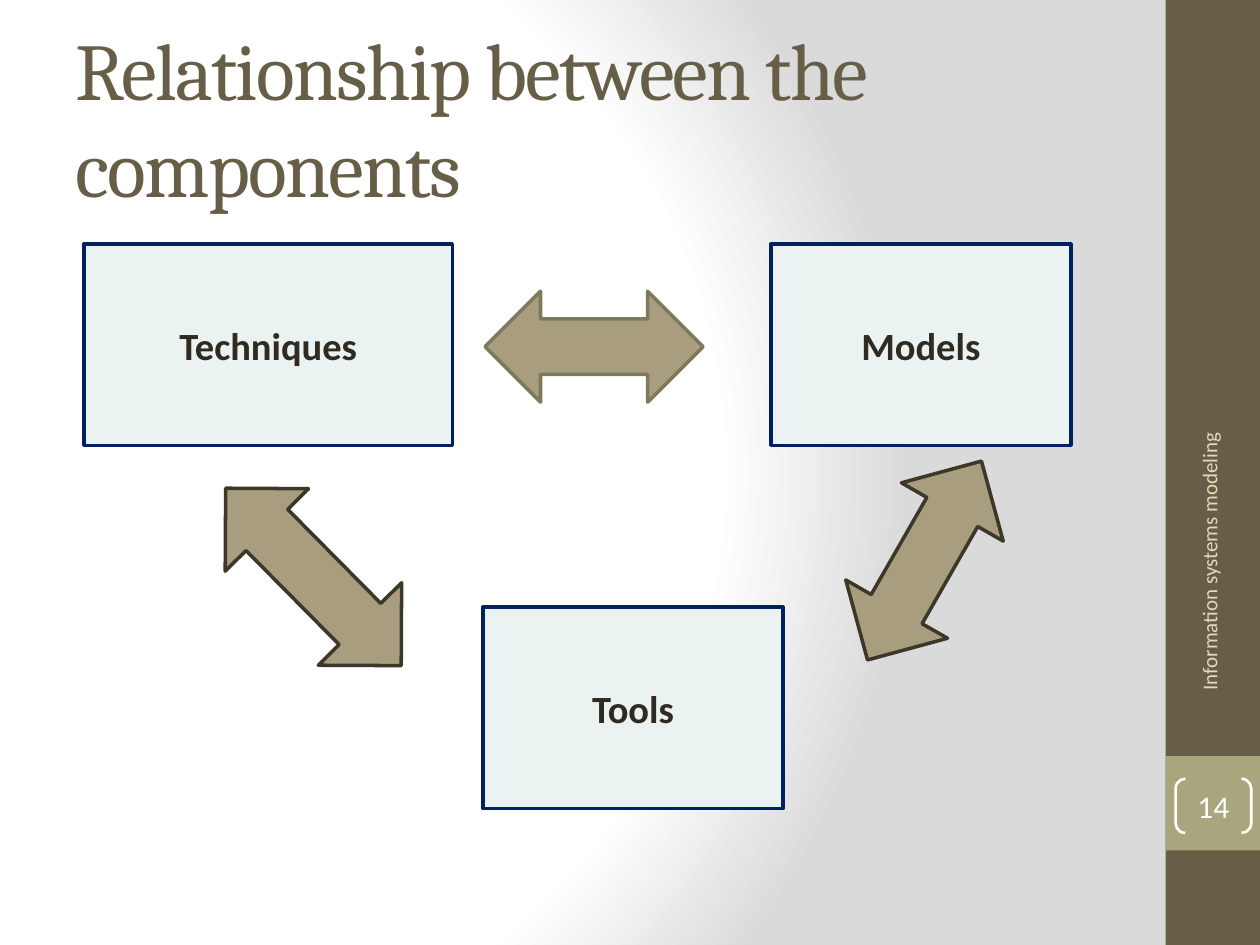
import pptx
import pptx.util
import pptx.oxml
import pptx.oxml.ns
import pptx.dml.color
import pptx.enum.shapes
import pptx.enum.text

Pt = pptx.util.Pt
MSO = pptx.enum.shapes.MSO_SHAPE
ALIGN = pptx.enum.text.PP_ALIGN


def rgb(hex_color):
    return pptx.dml.color.RGBColor.from_string(hex_color)


def write(sp, text, size, color, font="Calibri", bold=False, align=ALIGN.CENTER):
    tf = sp.text_frame
    tf.word_wrap = True
    tf.auto_size = pptx.enum.text.MSO_AUTO_SIZE.NONE
    tf.vertical_anchor = pptx.enum.text.MSO_ANCHOR.MIDDLE
    p = tf.paragraphs[0]
    p.alignment = align
    r = p.add_run()
    r.text = text
    r.font.size = Pt(size)
    r.font.name = font
    r.font.bold = bold
    r.font.color.rgb = rgb(color)
    return r


prs = pptx.Presentation()
prs.slide_width, prs.slide_height = Pt(720), Pt(540)
s = prs.slides.add_slide(prs.slide_layouts[5])

s.element.cSld.insert(0, pptx.oxml.parse_xml(
    f'<p:bg {pptx.oxml.ns.nsdecls("p", "a")}><p:bgPr><a:gradFill rotWithShape="1"><a:gsLst>'
    '<a:gs pos="0"><a:srgbClr val="FFFFFF"/></a:gs>'
    '<a:gs pos="75000"><a:srgbClr val="FFFFFF"/></a:gs>'
    '<a:gs pos="100000"><a:srgbClr val="DADADA"/></a:gs></a:gsLst>'
    '<a:path path="circle"><a:fillToRect l="20000" t="50000" r="100000" b="50000"/></a:path>'
    '</a:gradFill><a:effectLst/></p:bgPr></p:bg>'))

title = s.shapes.title
title.left, title.top, title.width, title.height = Pt(36), Pt(21.6), Pt(600), Pt(90)
r = write(title, "Relationship between the components", 46, "675E47", "Cambria", align=ALIGN.LEFT)
r.font._element.set("spc", "-100")

shapes = [
    (MSO.RECTANGLE, 666, 0, 54, 540, 0, "675E47", None, 0, None),
    (MSO.RECTANGLE, 666, 432, 54, 54, 0, "A9A57C", None, 0, None),
    (MSO.DOUBLE_BRACKET, 671.8, 445, 43.2, 31, 0, None, "FFFFFF", 1.5, ("14", 18, "FFFFFF")),
    (MSO.RECTANGLE, 48, 139.5, 210.5, 115, 0, "EBF2F2", "002060", 2, ("Techniques", 22, "2F2B20")),
    (MSO.RECTANGLE, 440.5, 139.5, 171.5, 115, 0, "EBF2F2", "002060", 2, ("Models", 22, "2F2B20")),
    (MSO.RECTANGLE, 276, 347, 171.5, 115, 0, "EBF2F2", "002060", 2, ("Tools", 22, "2F2B20")),
    (MSO.UP_DOWN_ARROW, 145.6, 258.4, 67, 142.6, 315.3, "A89D7F", "3C3729", 2, None),
    (MSO.UP_DOWN_ARROW, 494.8, 254.8, 67, 131, 209.8, "A89D7F", "3C3729", 2, None),
    (MSO.LEFT_RIGHT_ARROW, 277.2, 166.4, 124.6, 63.4, 0, "A89D7F", "7D7A5C", 2, None),
]
for kind, x, y, w, h, angle, fill, line, weight, label in shapes:
    sp = s.shapes.add_shape(kind, Pt(x), Pt(y), Pt(w), Pt(h))
    sp.shadow.inherit = False
    sp.rotation = angle
    if fill:
        sp.fill.solid()
        sp.fill.fore_color.rgb = rgb(fill)
    else:
        sp.fill.background()
    if line:
        sp.line.color.rgb = rgb(line)
        sp.line.width = Pt(weight)
    else:
        sp.line.fill.background()
    if label:
        write(sp, *label, bold=kind == MSO.RECTANGLE)
    if kind == MSO.DOUBLE_BRACKET:
        sp.adjustments[0] = 0.18
        tf = sp.text_frame
        tf.margin_left = tf.margin_right = tf.margin_top = tf.margin_bottom = 0

footer = s.shapes.add_textbox(Pt(597.6), Pt(319), Pt(186.5), Pt(28.8))
footer.rotation = 270
write(footer, "Information systems modeling", 12, "DFDCB7", align=ALIGN.RIGHT)

prs.save("out.pptx")
